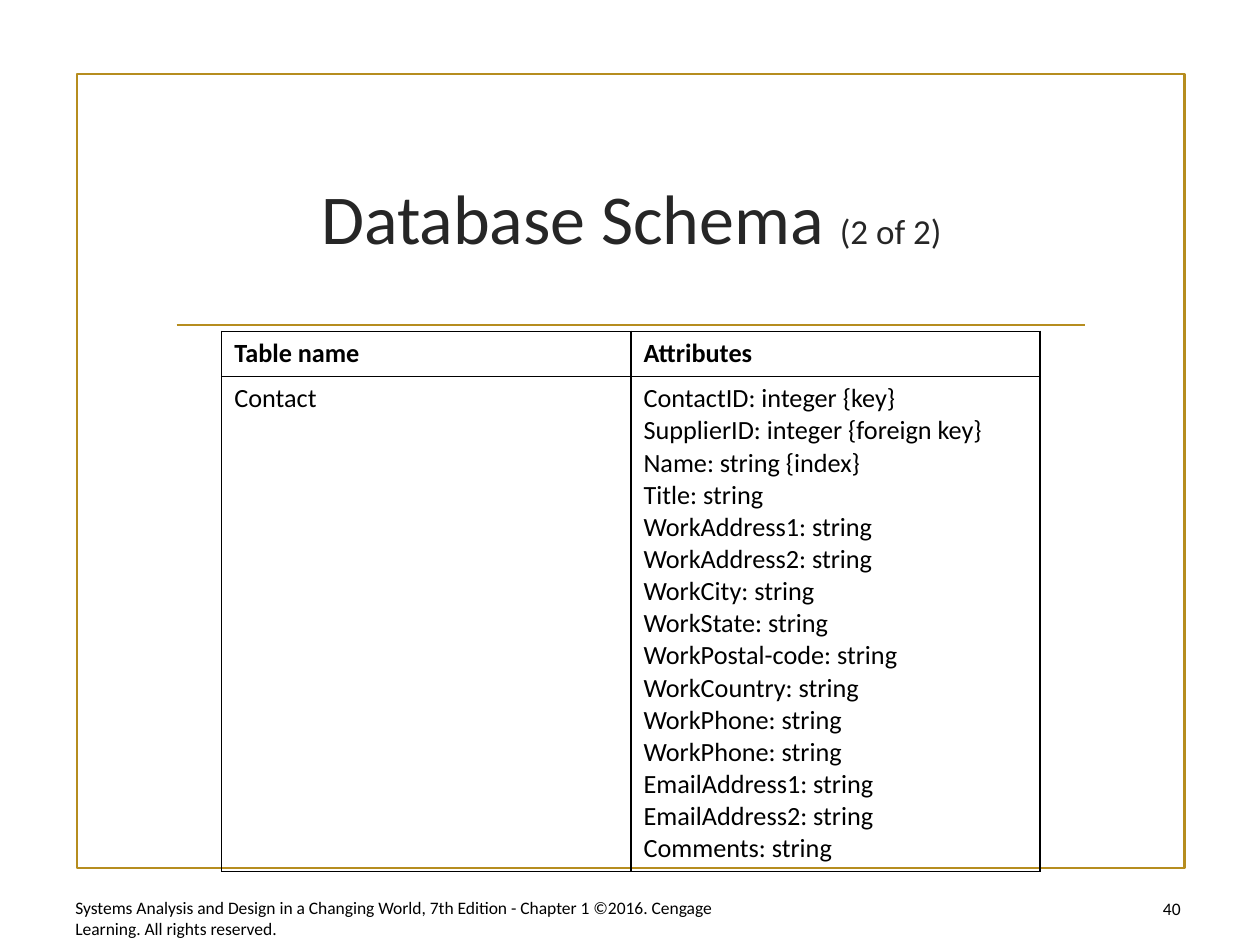
from dataclasses import dataclass

from lxml import etree
from pptx import Presentation
from pptx.dml.color import RGBColor
from pptx.enum.shapes import MSO_CONNECTOR, MSO_SHAPE
from pptx.enum.text import MSO_ANCHOR, PP_ALIGN
from pptx.oxml.ns import qn
from pptx.util import Cm, Pt

LEFT, CENTER, RIGHT = PP_ALIGN.LEFT, PP_ALIGN.CENTER, PP_ALIGN.RIGHT
MIDDLE = MSO_ANCHOR.MIDDLE
RECTANGLE = MSO_SHAPE.RECTANGLE
STRAIGHT = MSO_CONNECTOR.STRAIGHT

FONT = "Calibri"
COLORS = {"gold": "B68D1F", "title": "262626", "text": "000000"}
RULE_WIDTH = Pt(1.25)
BORDER_WIDTH = Pt(1)

COLUMN_WIDTH = Cm(8.25)
ROW_HEIGHTS = (Cm(0.91), Cm(9.96))
ATTRIBUTES = (
    "ContactID: integer {key}",
    "SupplierID: integer {foreign key}",
    "Name: string {index}",
    "Title: string",
    "WorkAddress1: string",
    "WorkAddress2: string",
    "WorkCity: string",
    "WorkState: string",
    "WorkPostal-code: string",
    "WorkCountry: string",
    "WorkPhone: string",
    "WorkPhone: string",
    "EmailAddress1: string",
    "EmailAddress2: string",
    "Comments: string",
)
SCHEMA = (("Table name", "Attributes"), ("Contact", "\n".join(ATTRIBUTES)))


@dataclass(frozen=True)
class Span:
    text: str
    size: float
    color: str = "text"


@dataclass(frozen=True)
class Label:
    left: float
    top: float
    width: float
    height: float
    align: PP_ALIGN
    spans: tuple[Span, ...]


LABELS = (
    Label(3.28, 2.54, 18.9, 3.63, CENTER,
          (Span("Database Schema ", 40, "title"), Span("(2 of 2)", 20, "title"))),
    Label(22.96, 17.93, 1.09, 0.79, RIGHT, (Span("40", 10),)),
    Label(1.27, 18.11, 14.17, 0.79, LEFT,
          (Span("Systems Analysis and Design in a Changing World, 7th Edition - "
                "Chapter 1 ©2016. Cengage Learning. All rights reserved.", 10),)),
)


def rgb(name: str) -> RGBColor:
    return RGBColor.from_string(COLORS[name])


def style_font(font, size: float, color: str, bold: bool = False) -> None:
    font.name = FONT
    font.size = Pt(size)
    font.bold = bold
    font.color.rgb = rgb(color)


def style_rule(line) -> None:
    line.color.rgb = rgb("gold")
    line.width = RULE_WIDTH


def add_frame(page) -> None:
    frame = page.shapes.add_shape(RECTANGLE, Cm(1.55), Cm(1.5), Cm(22.33), Cm(16))
    frame.shadow.inherit = False
    frame.fill.background()
    style_rule(frame.line)


def add_title_rule(page) -> None:
    rule = page.shapes.add_connector(STRAIGHT, Cm(3.56), Cm(6.55), Cm(21.87), Cm(6.55))
    style_rule(rule.line)
    etree.SubElement(rule.element.spPr, qn("a:effectLst"))


def add_label(page, label: Label) -> None:
    box = page.shapes.add_textbox(
        Cm(label.left), Cm(label.top), Cm(label.width), Cm(label.height))
    frame = box.text_frame
    frame.word_wrap = True
    frame.vertical_anchor = MIDDLE
    para = frame.paragraphs[0]
    para.alignment = label.align
    for span in label.spans:
        run = para.add_run()
        run.text = span.text
        style_font(run.font, span.size, span.color)


def add_borders(cell) -> None:
    properties = cell._tc.get_or_add_tcPr()
    for side in ("a:lnL", "a:lnR", "a:lnT", "a:lnB"):
        border = etree.SubElement(properties, qn(side), w=str(BORDER_WIDTH))
        fill = etree.SubElement(border, qn("a:solidFill"))
        etree.SubElement(fill, qn("a:srgbClr"), val=COLORS["text"])


def add_schema_table(page) -> None:
    table = page.shapes.add_table(
        len(SCHEMA), len(SCHEMA[0]), Cm(4.47), Cm(6.68),
        COLUMN_WIDTH * len(SCHEMA[0]), sum(ROW_HEIGHTS)).table
    for column in table.columns:
        column.width = COLUMN_WIDTH
    for row_index, texts in enumerate(SCHEMA):
        table.rows[row_index].height = ROW_HEIGHTS[row_index]
        for column_index, text in enumerate(texts):
            cell = table.cell(row_index, column_index)
            add_borders(cell)
            cell.fill.background()
            cell.text_frame.text = text
            for para in cell.text_frame.paragraphs:
                for run in para.runs:
                    style_font(run.font, 15, "text", bold=row_index == 0)


def main() -> None:
    deck = Presentation()
    deck.slide_width, deck.slide_height = Cm(25.4), Cm(19.05)
    page = deck.slides.add_slide(deck.slide_layouts[6])
    add_frame(page)
    add_title_rule(page)
    add_schema_table(page)
    for label in LABELS:
        add_label(page, label)
    deck.save("out.pptx")


if __name__ == "__main__":
    main()
